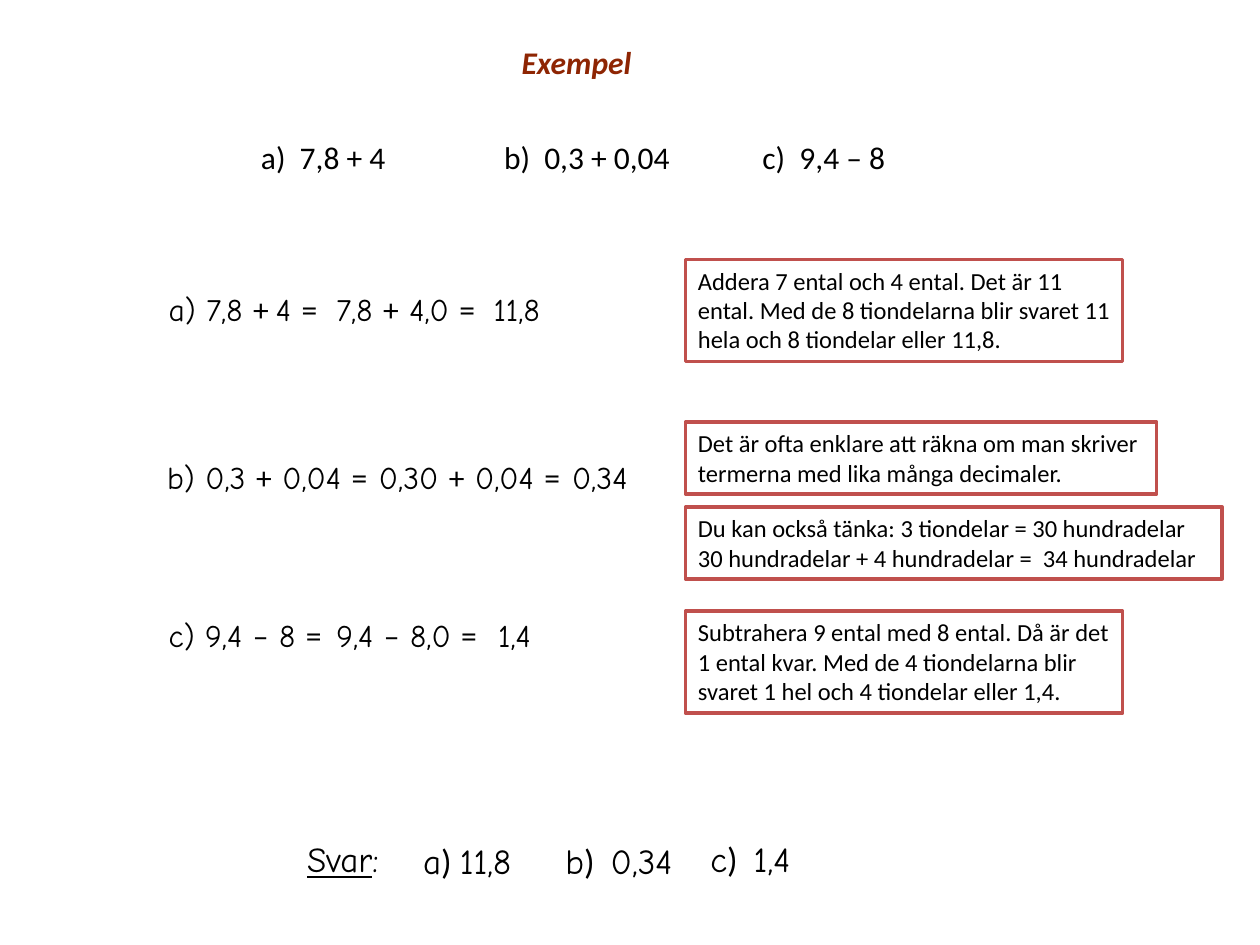
from pptx import Presentation
from pptx.dml.color import RGBColor
from pptx.enum.shapes import MSO_SHAPE
from pptx.enum.text import MSO_ANCHOR, PP_ALIGN
from pptx.util import Cm, Pt

RECT = MSO_SHAPE.RECTANGLE
LEFT = PP_ALIGN.LEFT
TOP = MSO_ANCHOR.TOP
SANS, HAND = "Calibri", "Comic Neue"
BLACK, WHITE, BROWN, RED = "000000", "FFFFFF", "8E2503", "C0504D"


def color(code):
    return RGBColor.from_string(code)


def write(frame, text, size=18, fonts=(SANS,), ink=BLACK, bold=False,
          italic=False, under=False, wrap=True):
    """Fill a frame; each | starts a run in the next font of the cycle."""
    frame.word_wrap = wrap
    frame.vertical_anchor = TOP
    for i, line in enumerate(text.split("\n")):
        para = frame.add_paragraph() if i else frame.paragraphs[0]
        para.alignment = LEFT
        for j, part in enumerate(line.split("|")):
            run = para.add_run()
            run.text = part
            font = run.font
            font.name = fonts[j % len(fonts)]
            font.size = Pt(size)
            font.color.rgb = color(ink)
            font.bold, font.italic = bold, italic
            font.underline = under and j == 0


def add_title(slide):
    title = slide.shapes.title
    title.left, title.top = Cm(10.26), Cm(0.74)
    title.width, title.height = Cm(2.74), Cm(1.02)
    write(title.text_frame, "Exempel", ink=BROWN, bold=True, italic=True,
          wrap=False)


def add_task(slide, x, text):
    grid = slide.shapes.add_table(1, 1, Cm(x), Cm(2.82), Cm(4.5), Cm(0.76))
    table = grid.table
    table.first_row = table.horz_banding = False
    cell = table.cell(0, 0)
    cell.fill.background()
    cell.margin_left = cell.margin_right = Cm(0.13)
    cell.margin_top = cell.margin_bottom = 0
    write(cell.text_frame, text)


def add_text(slide, x, y, width, height, text, **form):
    box = slide.shapes.add_textbox(Cm(x), Cm(y), Cm(width), Cm(height))
    write(box.text_frame, text, **form)


def add_hint(slide, y, width, height, text):
    box = slide.shapes.add_shape(RECT, Cm(13.82), Cm(y), Cm(width), Cm(height))
    box.shadow.inherit = False
    box.fill.solid()
    box.fill.fore_color.rgb = color(WHITE)
    box.line.color.rgb = color(RED)
    box.line.width = Pt(2)
    box.text_frame.margin_right = Cm(0.2)
    write(box.text_frame, text, size=14)


def main():
    deck = Presentation()
    deck.slide_width, deck.slide_height = Cm(25.4), Cm(19.05)
    slide = deck.slides.add_slide(deck.slide_layouts[5])
    add_title(slide)

    # Tasks
    for x, text in [(5.13, "a)  7,8 + 4"), (10.03, "b)  0,3 + 0,04"),
                    (15.24, "c)  9,4 – 8")]:
        add_task(slide, x, text)

    # Workings: task, rewritten terms, result
    rows = [
        (5.72, [(3.15, 4.6, "a) 7,8 |+ |4 |="),
                (6.53, 4.47, "7,8 |+| 4,0 |="), (9.7, 2.5, "11,8")]),
        (9.1, [(3.12, 4.6, "b) 0,3 |+| 0,04 |="),
               (7.39, 4.47, "0,30 |+| 0,04 |="), (11.07, 2.5, " 0,34")]),
        (12.29, [(3.15, 4.6, "c) 9,4 |–| 8 |="),
                 (6.53, 4.47, "9,4 |–| 8,0 |="), (9.58, 2.5, " 1,4")]),
    ]
    for y, steps in rows:
        for x, width, text in steps:
            add_text(slide, x, y, width, 1.02, text, fonts=(HAND, SANS))

    # Hints
    hints = [
        (5.23, 8.81, 2.06, "Addera 7 ental och 4 ental. Det är 11 ental. "
         "Med de 8 tiondelarna blir svaret 11 hela och 8 tiondelar "
         "eller 11,8."),
        (8.51, 9.5, 1.45, "Det är ofta enklare att räkna om man skriver "
         "termerna med lika många decimaler."),
        (10.22, 10.82, 1.45, "Du kan också tänka: 3 tiondelar = "
         "30 hundradelar\n30 hundradelar + 4 hundradelar =  34 hundradelar"),
        (12.32, 8.81, 2.06, "Subtrahera 9 ental med 8 ental. Då är det "
         "1 ental kvar. Med de 4 tiondelarna blir svaret 1 hel och "
         "4 tiondelar eller 1,4."),
    ]
    for hint in hints:
        add_hint(slide, *hint)

    # Answers
    add_text(slide, 5.94, 16.76, 2.64, 1.12, "Svar|:", size=20, fonts=(HAND,),
             under=True)
    for x, y, text in [(8.28, 16.8, "a|) |11,8"), (11.15, 16.8, "b|)  |0,34"),
                       (14.07, 16.76, "c|)  |1,4")]:
        add_text(slide, x, y, 3.94, 1.12, text, size=20, fonts=(HAND, SANS))

    deck.save("out.pptx")


if __name__ == "__main__":
    main()
